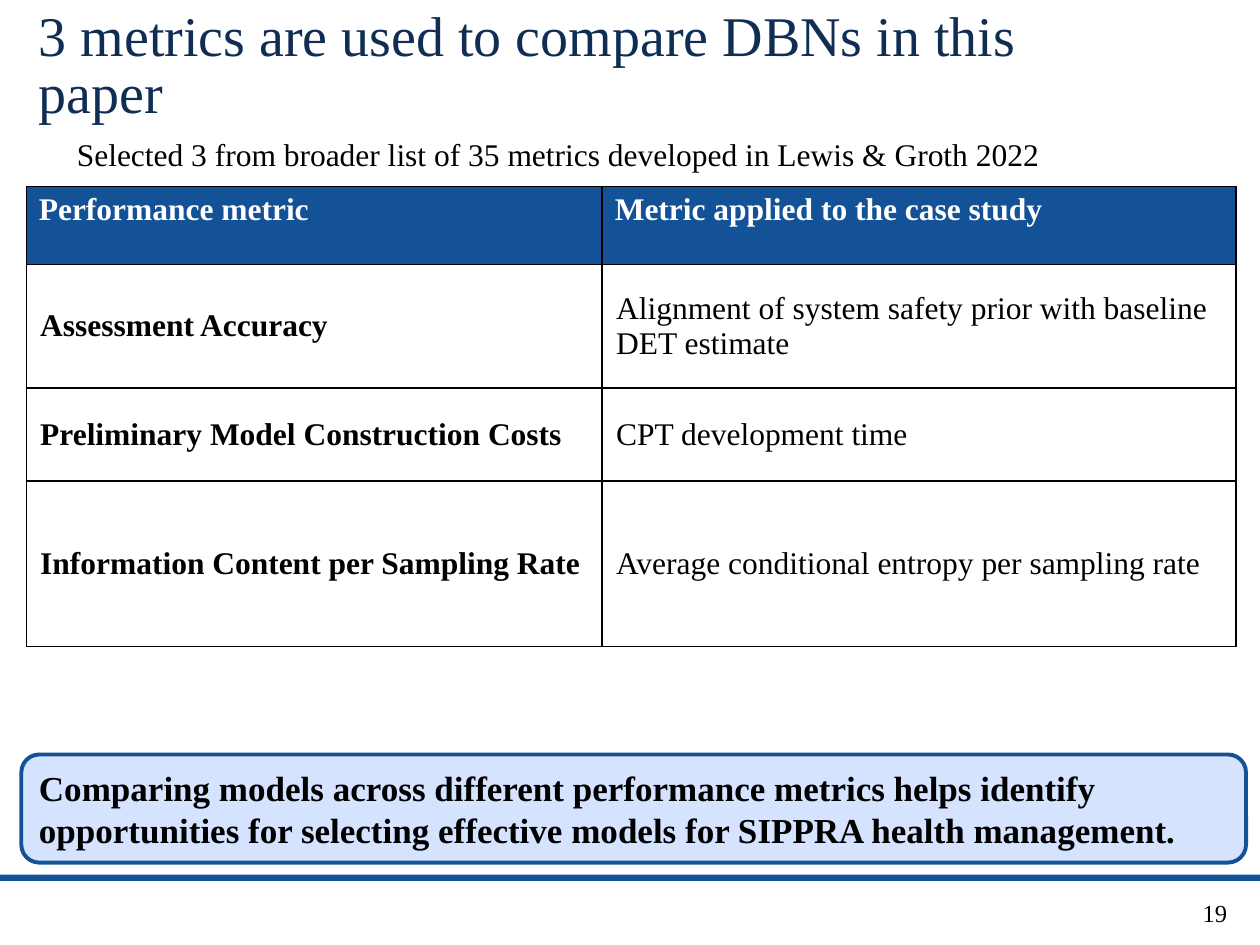
from lxml import etree
from pptx import Presentation
from pptx.dml.color import RGBColor
from pptx.enum.shapes import MSO_SHAPE as Shape
from pptx.enum.text import MSO_ANCHOR as Anchor, PP_ALIGN as Align
from pptx.oxml.ns import qn
from pptx.util import Cm, Pt

COLORS = {
    "navy": "102E54",
    "blue": "135297",
    "pale": "D5E3FF",
    "black": "000000",
    "white": "FFFFFF",
}
FONT = "Times New Roman"


def write(frame, text, size, color="black", bold=False):
    frame.word_wrap = True
    paragraph = frame.paragraphs[0]
    paragraph.text = text
    paragraph.alignment = Align.LEFT
    font = paragraph.font
    font.name, font.size, font.bold = FONT, Pt(size), bold
    font.color.rgb = RGBColor.from_string(COLORS[color])
    return paragraph


def add_box(kind, left, top, width, height, fill):
    shape = slide.shapes.add_shape(kind, Cm(left), Cm(top), Cm(width), Cm(height))
    shape.shadow.inherit = False
    shape.fill.solid()
    shape.fill.fore_color.rgb = RGBColor.from_string(COLORS[fill])
    return shape


presentation = Presentation()
presentation.slide_width, presentation.slide_height = Cm(25.4), Cm(19.05)
slide = presentation.slides.add_slide(presentation.slide_layouts[6])

# Footer rule and page number
rule = add_box(Shape.RECTANGLE, 0, 17.63, 25.4, 0.13, "blue")
rule.line.fill.background()
number = slide.shapes.add_textbox(Cm(23.29), Cm(17.98), Cm(1.7), Cm(0.84))
write(number.text_frame, "19", 14).alignment = Align.RIGHT

# Title and subtitle
title = slide.shapes.add_textbox(Cm(0.53), Cm(0), Cm(21.41), Cm(2.74))
title.text_frame.vertical_anchor = Anchor.MIDDLE
heading = write(title.text_frame, "3 metrics are used to compare DBNs in this paper", 32, "navy")
heading.line_spacing = 0.85
subtitle = slide.shapes.add_textbox(Cm(1.3), Cm(2.59), Cm(19.96), Cm(1.02))
write(subtitle.text_frame,
      "Selected 3 from broader list of 35 metrics developed in Lewis & Groth 2022", 18)
subtitle.text_frame.word_wrap = False

# Metrics table
rows = [
    (1.57, "Performance metric", "Metric applied to the case study"),
    (2.49, "Assessment Accuracy", "Alignment of system safety prior with baseline DET estimate"),
    (1.88, "Preliminary Model Construction Costs", "CPT development time"),
    (3.33, "Information Content per Sampling Rate", "Average conditional entropy per sampling rate"),
]
table = slide.shapes.add_table(len(rows), 2, Cm(0.53), Cm(3.76), Cm(24.38), Cm(9.27)).table
table.columns[0].width, table.columns[1].width = Cm(11.61), Cm(12.78)
for row, (height, *texts) in enumerate(rows):
    table.rows[row].height = Cm(height)
    header = row == 0
    for column, text in enumerate(texts):
        cell = table.cell(row, column)
        write(cell.text_frame, text, 18, "white" if header else "black",
              bold=header or column == 0)
        if not header:
            cell.vertical_anchor = Anchor.MIDDLE
            cell.margin_left = cell.margin_right = Cm(0.28)
            cell.margin_top = cell.margin_bottom = Cm(0)
        # Borders come before the fill in the cell properties
        properties = cell._tc.get_or_add_tcPr()
        for side in ("a:lnL", "a:lnR", "a:lnT", "a:lnB"):
            border = etree.SubElement(properties, qn(side), w=str(Pt(1)))
            solid = etree.SubElement(border, qn("a:solidFill"))
            etree.SubElement(solid, qn("a:srgbClr"), val=COLORS["black"])
        if header:
            cell.fill.solid()
            cell.fill.fore_color.rgb = RGBColor.from_string(COLORS["blue"])
        else:
            cell.fill.background()

# Takeaway
takeaway = add_box(Shape.ROUNDED_RECTANGLE, 0.43, 15.21, 24.69, 2.18, "pale")
takeaway.line.color.rgb = RGBColor.from_string(COLORS["blue"])
takeaway.line.width = Pt(2.25)
takeaway.text_frame.vertical_anchor = Anchor.MIDDLE
write(takeaway.text_frame,
      "Comparing models across different performance metrics helps identify "
      "opportunities for selecting effective models for SIPPRA health management.",
      20, bold=True)

presentation.save("out.pptx")
